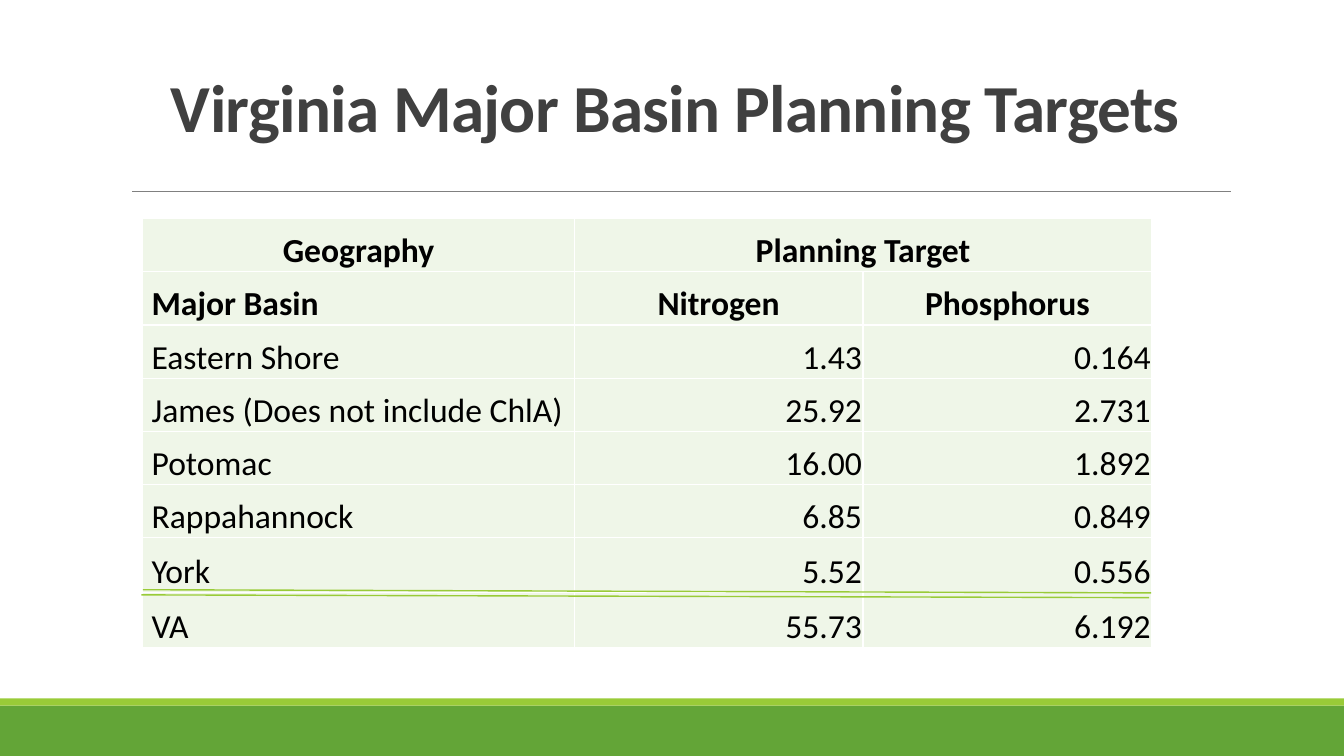
import lxml.etree
import pptx
import pptx.dml.color
import pptx.enum.shapes
import pptx.enum.text
import pptx.oxml.ns
import pptx.util

Cm = pptx.util.Cm
ALIGN = pptx.enum.text.PP_ALIGN
ANCHOR = pptx.enum.text.MSO_ANCHOR
LIME = "99CB38"


def color(value):
    return pptx.dml.color.RGBColor.from_string(value)


def write(frame, text, size=24, bold=False, fill="000000", align=ALIGN.LEFT):
    paragraph = frame.paragraphs[0]
    paragraph.alignment = align
    run = paragraph.add_run()
    run.text = text
    run.font.name = "Calibri"
    run.font.size = pptx.util.Pt(size)
    run.font.bold = bold
    run.font.color.rgb = color(fill)
    return paragraph


presentation = pptx.Presentation()
presentation.slide_width = Cm(33.87)
presentation.slide_height = Cm(19.05)
slide = presentation.slides.add_slide(presentation.slide_layouts[5])

# Title
title = slide.shapes.title
title.left, title.top, title.width, title.height = Cm(3.05), Cm(0.79), Cm(27.94), Cm(4.04)
title.text_frame.vertical_anchor = ANCHOR.MIDDLE
title.text_frame.auto_size = pptx.enum.text.MSO_AUTO_SIZE.NONE
heading = write(title.text_frame, "Virginia Major Basin Planning Targets",
                size=48, bold=True, fill="404040", align=ALIGN.CENTER)
heading.line_spacing = 0.85
heading.runs[0].font._element.set("spc", "-50")

# Footer bands
for top, height, fill in [(17.78, 1.27, "63A537"), (17.6, 0.18, LIME)]:
    band = slide.shapes.add_shape(pptx.enum.shapes.MSO_SHAPE.RECTANGLE,
                                  0, Cm(top), presentation.slide_width, Cm(height))
    band.shadow.inherit = False
    band.fill.solid()
    band.fill.fore_color.rgb = color(fill)
    band.line.fill.background()

# Planning target table
rows = [
    ("Geography", "Planning Target", ""),
    ("Major Basin", "Nitrogen", "Phosphorus"),
    ("Eastern Shore", "1.43", "0.164"),
    ("James (Does not include ChlA)", "25.92", "2.731"),
    ("Potomac", "16.00", "1.892"),
    ("Rappahannock", "6.85", "0.849"),
    ("York", "5.52", "0.556"),
    ("VA", "55.73", "6.192"),
]
column_widths = [10.87, 7.28, 7.28]
row_heights = [1.34] * 6 + [1.39] * 2
table = slide.shapes.add_table(len(rows), len(column_widths), Cm(3.6), Cm(5.51),
                               Cm(sum(column_widths)), Cm(sum(row_heights))).table
table.first_row = False
table.horz_banding = False
for column, width in zip(table.columns, column_widths):
    column.width = Cm(width)
for row, height in zip(table.rows, row_heights):
    row.height = Cm(height)
table.cell(0, 1).merge(table.cell(0, 2))

for row_index, row in enumerate(rows):
    for column_index, text in enumerate(row):
        cell = table.cell(row_index, column_index)
        properties = cell._tc.get_or_add_tcPr()
        for side in ("a:lnL", "a:lnR", "a:lnT", "a:lnB"):
            border = lxml.etree.SubElement(properties, pptx.oxml.ns.qn(side), w="12700")
            solid = lxml.etree.SubElement(border, pptx.oxml.ns.qn("a:solidFill"))
            lxml.etree.SubElement(solid, pptx.oxml.ns.qn("a:srgbClr"), val="FFFFFF")
        cell.fill.solid()
        cell.fill.fore_color.rgb = color("EFF6E8")
        cell.vertical_anchor = ANCHOR.BOTTOM
        cell.margin_left = cell.margin_right = cell.margin_top = Cm(0.03)
        cell.margin_bottom = 0
        if column_index == 0 and row_index > 0:
            cell.margin_left = Cm(0.22)
            align = ALIGN.LEFT
        else:
            align = ALIGN.CENTER if row_index < 2 else ALIGN.RIGHT
        if text:
            write(cell.text_frame, text, bold=row_index < 2, align=align)

# Rule under the title and double rule above the total
for left, top, right, bottom, stroke, weight in [
    (3.33, 4.83, 31.01, 4.83, "808080", 0.5),
    (3.56, 14.99, 28.96, 15.06, LIME, 1),
    (3.6, 14.86, 29.01, 14.94, LIME, 1),
]:
    rule = slide.shapes.add_connector(pptx.enum.shapes.MSO_CONNECTOR.STRAIGHT,
                                      Cm(left), Cm(top), Cm(right), Cm(bottom))
    rule.line.color.rgb = color(stroke)
    rule.line.width = pptx.util.Pt(weight)
    lxml.etree.SubElement(rule._element.spPr, pptx.oxml.ns.qn("a:effectLst"))

presentation.save("out.pptx")
